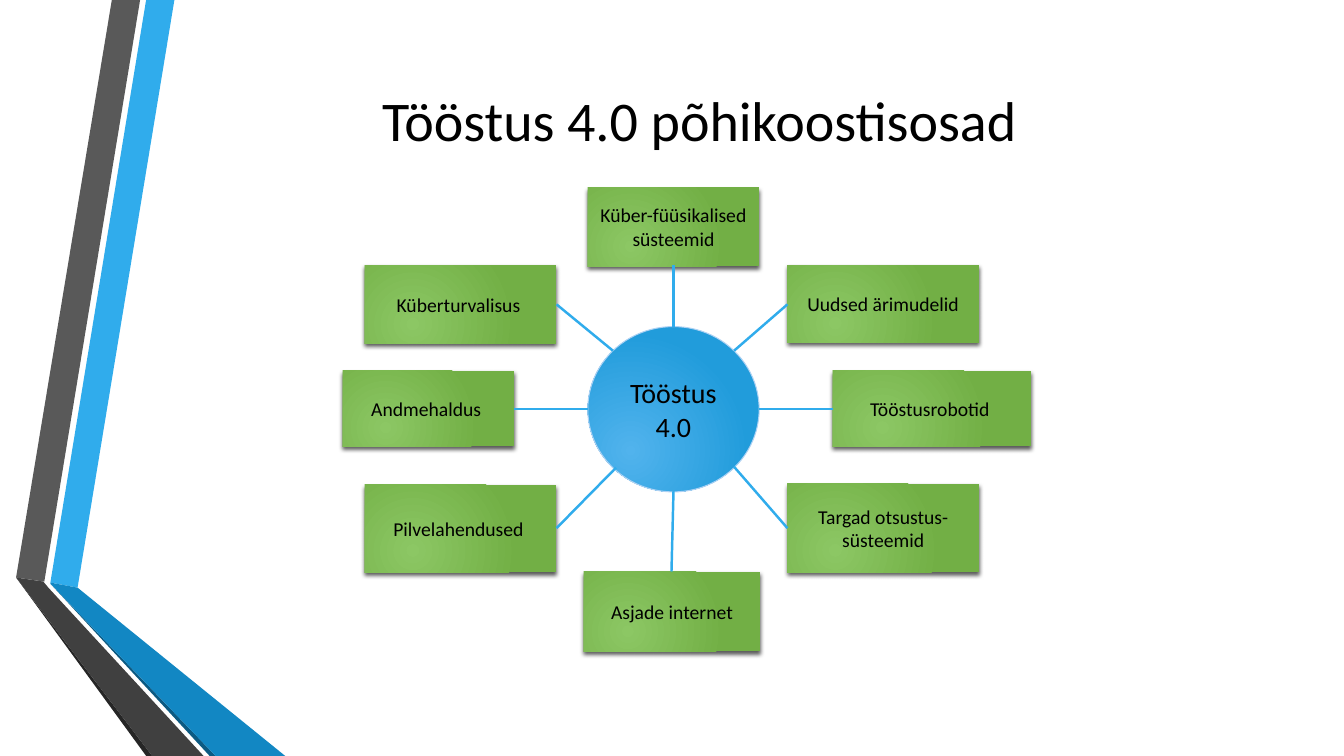
from lxml import etree
from pptx import Presentation
from pptx import util as u
from pptx.dml.color import RGBColor
from pptx.enum import shapes, text
from pptx.oxml import ns, parse_xml

BLACK = RGBColor(0, 0, 0)
BLUE = RGBColor(0x30, 0xAC, 0xEC)
RIM = RGBColor(0xAE, 0xD2, 0xF4)
SKY = RGBColor(0x51, 0xB3, 0xED)
SEA = RGBColor(0x21, 0x9C, 0xDB)
LIME = RGBColor(0x8C, 0xC7, 0x64)
LEAF = RGBColor(0x72, 0xAF, 0x45)
GRAY = RGBColor(0x59, 0x59, 0x59)
COAL = RGBColor(0x26, 0x26, 0x26)
NAVY = RGBColor(0x0C, 0x5A, 0x82)
DEEP = RGBColor(0x12, 0x87, 0xC3)
DARK = RGBColor(0x40, 0x40, 0x40)


def write(shape, words, size, anchor=text.MSO_ANCHOR.MIDDLE):
    frame = shape.text_frame
    frame.word_wrap = True
    frame.auto_size = text.MSO_AUTO_SIZE.NONE
    frame.vertical_anchor = anchor
    frame.text = words
    para = frame.paragraphs[0]
    para.alignment = text.PP_ALIGN.CENTER
    font = para.runs[0].font
    font.name = "Calibri"
    font.size = u.Pt(size)
    font.color.rgb = BLACK


def glow(shape, light, deep):
    shape.shadow.inherit = False
    shape.fill.gradient()
    for stop, color in zip(shape.fill.gradient_stops, (light, deep)):
        stop.color.rgb = color
    lin = shape._element.spPr.find(".//" + ns.qn("a:lin"))
    lin.getparent().replace(lin, parse_xml(
        f'<a:path {ns.nsdecls("a")} path="circle">'
        '<a:fillToRect l="50000" t="100000" r="100000" b="50000"/></a:path>'))


deck = Presentation()
deck.slide_width = u.Inches(13.33)
deck.slide_height = u.Inches(7.5)
slide = deck.slides.add_slide(deck.slide_layouts[5])
items = slide.shapes

bands = [
    (BLUE, [(50, 578), (77, 583), (173, 0), (145, 0)]),
    (GRAY, [(139, 0), (111, 0), (16, 573), (44, 577)]),
    (COAL, [(16, 573), (145, 750), (151, 750)]),
    (NAVY, [(50, 579), (208, 750), (214, 750)]),
    (DEEP, [(50, 578), (50, 579), (214, 750), (283, 750), (77, 583)]),
    (DARK, [(202, 750), (48, 583), (43, 577), (16, 573), (151, 750)]),
]
for color, points in bands:
    pen = items.build_freeform(*points[0], scale=u.Inches(0.01))
    pen.add_line_segments(points[1:])
    band = pen.convert_to_shape()
    band.shadow.inherit = False
    band.fill.solid()
    band.fill.fore_color.rgb = color
    band.line.fill.background()

title = items.title
title.left, title.top = u.Inches(2.34), u.Inches(0)
title.width, title.height = u.Inches(9.19), u.Inches(1.63)
write(title, "Tööstus 4.0 põhikoostisosad", 40, text.MSO_ANCHOR.BOTTOM)
title.text_frame.margin_bottom = u.Inches(0.11)

hub = items.add_shape(shapes.MSO_SHAPE.OVAL, *map(u.Inches, (5.83, 3.24, 1.7, 1.64)))
glow(hub, SKY, SEA)
hub.line.color.rgb = RIM
hub.line.width = u.Pt(0.75)
write(hub, "Tööstus 4.0", 20)

parts = [
    ("Küber-füüsikalised süsteemid", (5.83, 1.86, 1.7, 0.78), (6.68, 3.24, 6.68, 2.63)),
    ("Uudsed ärimudelid", (7.81, 2.63, 1.9, 0.77), (7.28, 3.48, 7.81, 3.02)),
    ("Tööstusrobotid ", (8.26, 3.68, 1.97, 0.75), (7.53, 4.06, 8.26, 4.06)),
    ("Targad otsustus-süsteemid", (7.81, 4.8, 1.9, 0.88), (7.28, 4.63, 7.81, 5.24)),
    ("Asjade internet", (5.79, 5.67, 1.75, 0.79), (6.66, 5.67, 6.68, 4.87)),
    ("Küberturvalisus ", (3.62, 2.63, 1.9, 0.78), (6.08, 3.48, 5.52, 3.02)),
    ("Andmehaldus ", (3.4, 3.68, 1.7, 0.75), (5.1, 4.06, 5.83, 4.06)),
    ("Pilvelahendused ", (3.62, 4.81, 1.9, 0.87), (5.52, 5.24, 6.11, 4.64)),
]
for words, place, ends in parts:
    box = items.add_shape(shapes.MSO_SHAPE.RECTANGLE, *map(u.Inches, place))
    glow(box, LIME, LEAF)
    box.line.fill.background()
    box._element.spPr.find(ns.qn("a:effectLst")).append(parse_xml(
        f'<a:outerShdw {ns.nsdecls("a")} blurRad="38100" dist="25400" dir="5400000" '
        'rotWithShape="0"><a:srgbClr val="000000"><a:alpha val="64000"/></a:srgbClr>'
        '</a:outerShdw>'))
    write(box, words, 14)

    spoke = items.add_connector(shapes.MSO_CONNECTOR.STRAIGHT, *map(u.Inches, ends))
    spoke.line.color.rgb = BLUE
    spoke.line.width = u.Pt(1.75)
    etree.SubElement(spoke._element.spPr, ns.qn("a:effectLst"))

deck.save("out.pptx")
